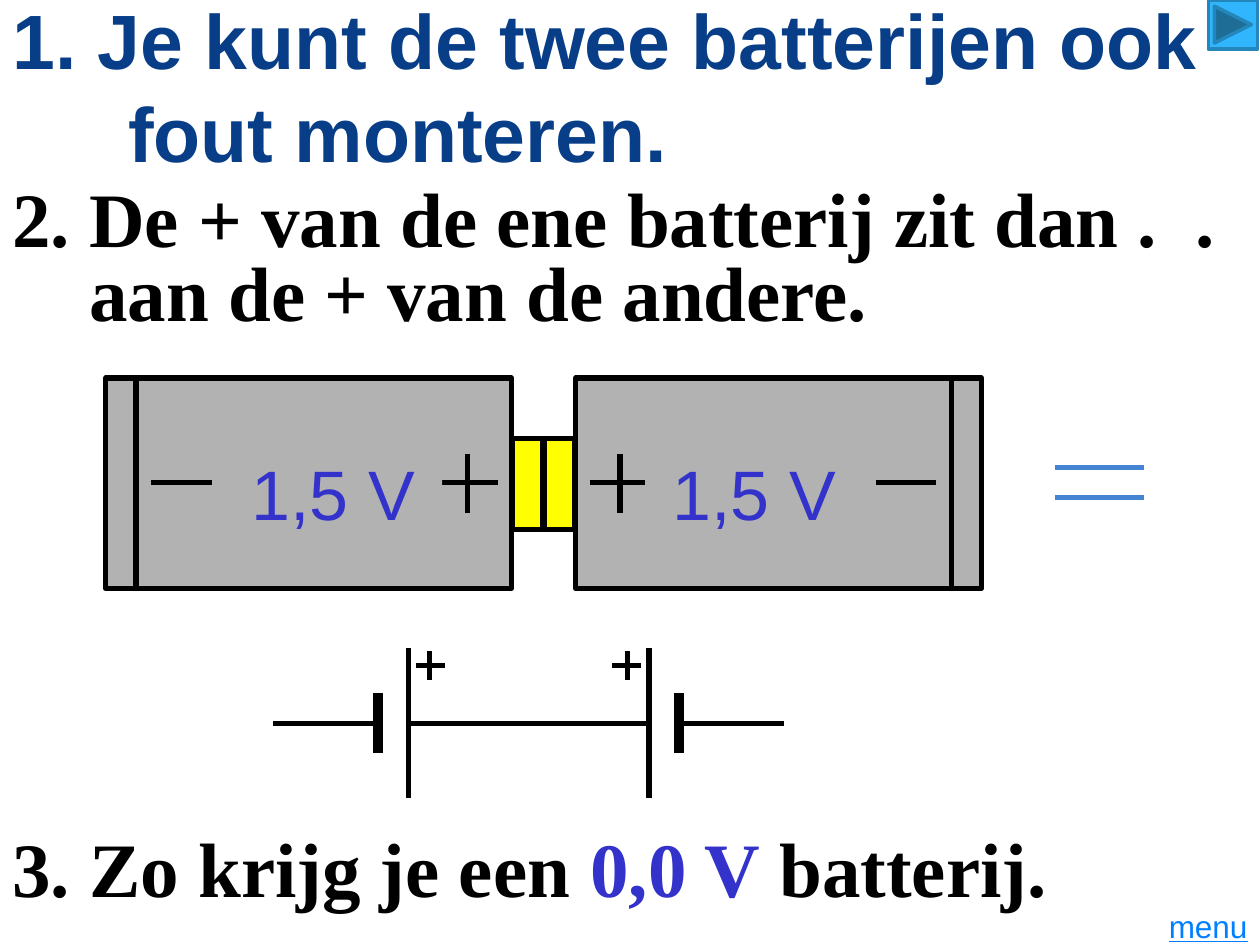
from lxml.etree import SubElement
from pptx import Presentation
from pptx.dml.color import RGBColor
from pptx.enum.shapes import MSO_CONNECTOR, MSO_SHAPE
from pptx.enum.text import MSO_ANCHOR, MSO_AUTO_SIZE, PP_ALIGN
from pptx.oxml.ns import qn
from pptx.util import Inches, Pt

BLACK = RGBColor(0x00, 0x00, 0x00)
NAVY = RGBColor(0x07, 0x3E, 0x87)
VIOLET = RGBColor(0x33, 0x33, 0xCC)
BLUE = RGBColor(0x45, 0x84, 0xD3)
LINK_BLUE = RGBColor(0x00, 0x80, 0xFF)
BUTTON_FILL = RGBColor(0x31, 0xB6, 0xFD)
BUTTON_EDGE = RGBColor(0x24, 0x87, 0xBB)
GREY = RGBColor(0xB2, 0xB2, 0xB2)
YELLOW = RGBColor(0xFF, 0xFF, 0x00)
SANS = "Arial"
SERIF = "Times New Roman"


class SlideBuilder:
    def __init__(self, slide):
        self.s = slide

    def fill_text(self, sp, runs, size, font, bold=False, underline=None,
                  align=PP_ALIGN.LEFT, top=0.15, left=0, hanging=0):
        tf = sp.text_frame
        tf.word_wrap = True
        tf.auto_size = MSO_AUTO_SIZE.NONE
        tf.vertical_anchor = MSO_ANCHOR.MIDDLE
        tf.margin_top = Inches(top)
        p = tf.paragraphs[0]
        p.alignment = align
        pPr = p._p.get_or_add_pPr()
        pPr.set("marL", str(Inches(left)))
        pPr.set("indent", str(-Inches(hanging)))
        for text, color in runs:
            r = p.add_run()
            r.text = text
            r.font.size = Pt(size)
            r.font.name = font
            r.font.bold = bold
            r.font.underline = underline
            r.font.color.rgb = color

    def text(self, x, y, w, h, runs, size, font, **style):
        sp = self.s.shapes.add_textbox(Inches(x), Inches(y), Inches(w), Inches(h))
        self.fill_text(sp, runs, size, font, **style)

    def statement(self, y, h, runs, font=SERIF, left=0.92, hanging=0.92):
        self.text(0, y, 10, h, runs, 44, font, bold=True, left=left, hanging=hanging)

    def shape(self, x, y, w, h, fill, edge=None, width=3, kind=MSO_SHAPE.RECTANGLE):
        sp = self.s.shapes.add_shape(kind, Inches(x), Inches(y), Inches(w), Inches(h))
        sp.shadow.inherit = False
        sp.fill.solid()
        sp.fill.fore_color.rgb = fill
        if edge is None:
            sp.line.fill.background()
        else:
            sp.line.color.rgb = edge
            sp.line.width = Pt(width)
        return sp

    def line(self, x1, y1, x2, y2, color=BLACK, width=3):
        c = self.s.shapes.add_connector(
            MSO_CONNECTOR.STRAIGHT, Inches(x1), Inches(y1), Inches(x2), Inches(y2))
        c.line.color.rgb = color
        c.line.width = Pt(width)
        SubElement(c._element.spPr, qn("a:effectLst"))

    def cell_symbol(self, mirrored):
        def mx(x):
            return 8.39 - x if mirrored else x

        for x1, y1, x2, y2, width in [
            (2.17, 5.74, 3, 5.74, 3),
            (3, 5.5, 3, 5.98, 6),
            (3.24, 5.74, 4.2, 5.74, 3),
            (3.24, 5.14, 3.24, 6.33, 3),
            (3.41, 5.17, 3.41, 5.4, 3),
            (3.3, 5.28, 3.53, 5.28, 3),
        ]:
            self.line(mx(x1), y1, mx(x2), y2, width=width)

    def battery(self, mirrored):
        def mx(x, w=0):
            return 8.63 - x - w if mirrored else x

        self.shape(mx(0.84, 3.22), 3, 3.22, 1.67, GREY, BLACK)
        self.shape(mx(4.07, 0.24), 3.48, 0.24, 0.72, YELLOW, BLACK)
        for x1, y1, x2, y2 in [
            (1.08, 3, 1.08, 4.67),
            (3.71, 3.6, 3.71, 4.07),
            (3.47, 3.83, 3.95, 3.83),
            (1.2, 3.83, 1.68, 3.83),
        ]:
            self.line(mx(x1), y1, mx(x2), y2)
        label = self.shape(mx(1.78, 1.73), 3.47, 1.73, 0.77, GREY)
        self.fill_text(label, [("1,5 V", VIOLET)], 40, SANS, align=PP_ALIGN.CENTER)


def main():
    prs = Presentation()
    prs.slide_width = Inches(10)
    prs.slide_height = Inches(7.5)
    b = SlideBuilder(prs.slides.add_slide(prs.slide_layouts[6]))

    b.statement(0, 1.25, [("1. Je kunt de twee batterijen ook fout monteren.", NAVY)], SANS)
    b.statement(1.42, 0.5, [("2. De + van de ene batterij zit dan .  .", BLACK)])
    b.statement(1.92, 0.67, [("aan de + van de andere.", BLACK)], left=0.61, hanging=0)

    for mirrored in (True, False):
        b.cell_symbol(mirrored)

    b.statement(6.58, 0.5, [("3. Zo krijg je een ", BLACK), ("0,0 V", VIOLET),
                            (" batterij.", BLACK)])

    for y in (3.71, 3.95):
        b.line(8.37, y, 9.08, y, BLUE)
    for mirrored in (False, True):
        b.battery(mirrored)

    b.text(9.06, 7.19, 0.94, 0.31, [("menu", LINK_BLUE)], 18, SANS,
           underline=True, align=PP_ALIGN.RIGHT, top=0.05)
    b.shape(9.59, 0, 0.39, 0.39, BUTTON_FILL, BUTTON_EDGE, 2,
            MSO_SHAPE.ACTION_BUTTON_FORWARD_OR_NEXT)
    prs.save("out.pptx")


if __name__ == "__main__":
    main()
